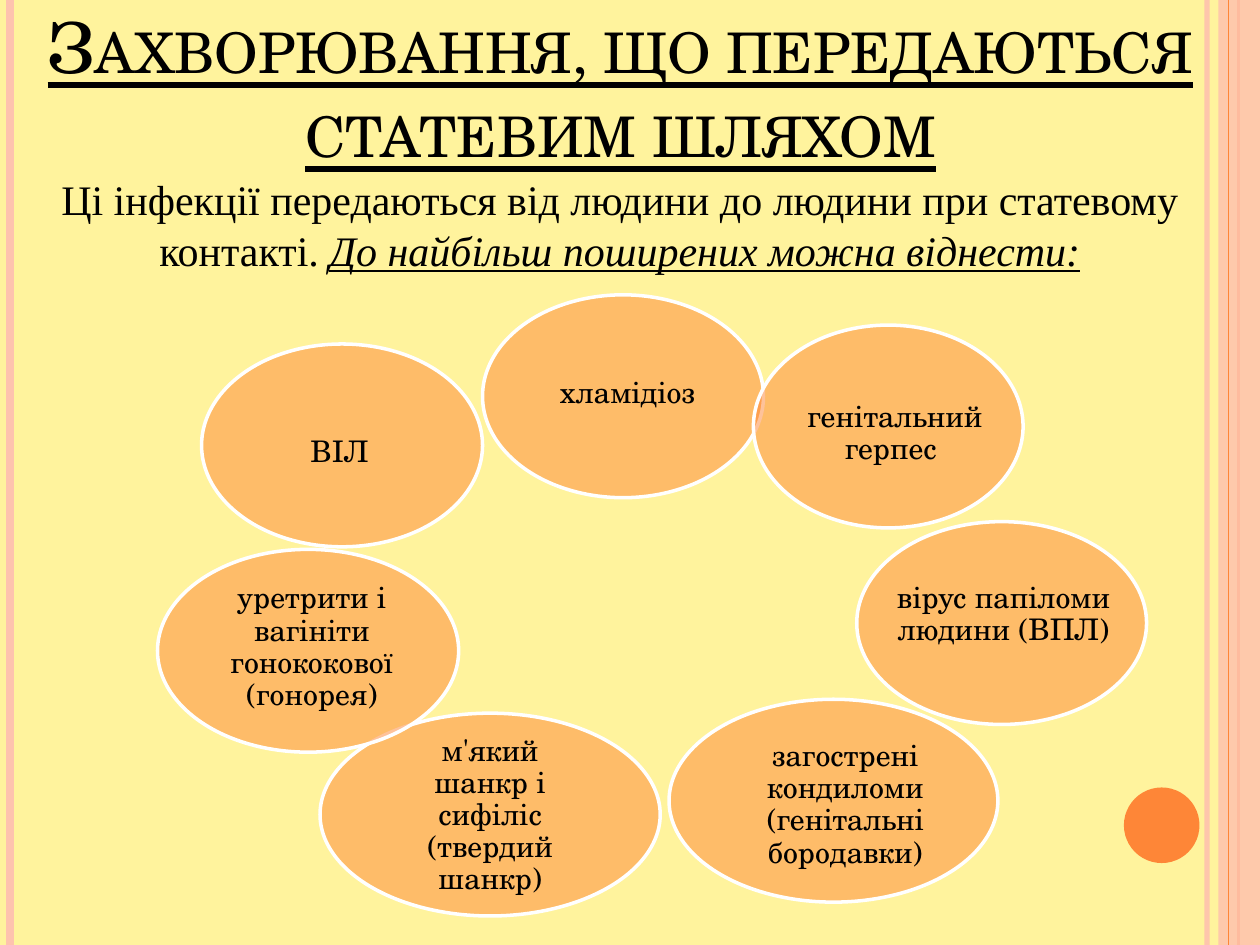
import pptx
import pptx.util
import pptx.dml.color
import pptx.enum.shapes
import pptx.enum.text
import pptx.oxml
from pptx.oxml.ns import nsdecls, qn

Inches, Pt = pptx.util.Inches, pptx.util.Pt
SHAPES = pptx.enum.shapes.MSO_SHAPE
ANCHORS = pptx.enum.text.MSO_ANCHOR

ORANGE, PEACH, CREAM, WHITE, BLACK = "FE8637", "FEC3AE", "FFF39D", "FFFFFF", "000000"
SERIF, SCHOOL = "Times New Roman", "TeX Gyre Schola"
PAGE_WIDTH, PAGE_HEIGHT = 10, 7.5
OVAL_HEIGHT = 1.61

# Wording, oval (left, top, width), label (left, top, width, height) within the oval
DISEASES = [
    ("хламідіоз", (3.83, 2.34, 2.23), (0.23, 0.24, 1.84, 1.09)),
    (" генітальний герпес", (5.98, 2.58, 2.14), (0.19, 0.23, 1.8, 1.27)),
    ("вірус папіломи людини (ВПЛ)", (6.8, 4.14, 2.3), (0.31, 0.16, 1.71, 1.16)),
    ("загострені кондиломи (генітальні бородавки)", (5.31, 5.55, 2.61), (0.32, 0.23, 2.16, 1.22)),
    ("м'який шанкр і сифіліс (твердий шанкр)", (2.54, 5.66, 2.7), (0.74, 0.04, 1.22, 1.55)),
    ("уретрити і вагініти гонококової (гонорея)", (1.25, 4.36, 2.39), (0.37, 0.2, 1.71, 1.16)),
    ("ВІЛ", (1.6, 2.73, 2.23), (0.59, 0.32, 1.01, 1.09)),
]


def color(value):
    return pptx.dml.color.RGBColor.from_string(value)


def set_alpha(fill_owner, percent):
    """Make the solid colour inside the given XML element partly transparent."""
    srgb = next(fill_owner.iter(qn("a:srgbClr")))
    srgb.append(pptx.oxml.parse_xml(f'<a:alpha {nsdecls("a")} val="{percent * 1000}"/>'))


def add_filled(page, kind, box, fill, alpha=100, outline=None):
    shape = page.shapes.add_shape(kind, *map(Inches, box))
    shape.shadow.inherit = False
    shape.fill.solid()
    shape.fill.fore_color.rgb = color(fill)
    if alpha < 100:
        set_alpha(shape._element.spPr, alpha)
    if outline:
        shape.line.color.rgb = color(outline)
        shape.line.width = Pt(2)
    else:
        shape.line.fill.background()
    return shape


def add_stripe(page, left, line_color, width, alpha=100):
    stripe = page.shapes.add_connector(
        pptx.enum.shapes.MSO_CONNECTOR.STRAIGHT,
        Inches(left), 0, Inches(left), Inches(PAGE_HEIGHT))
    stripe.line.color.rgb = color(line_color)
    stripe.line.width = Pt(width)
    properties = stripe._element.spPr
    if alpha < 100:
        set_alpha(properties, alpha)
    properties.append(pptx.oxml.parse_xml(f'<a:effectLst {nsdecls("a")}/>'))


def add_text(page, box, anchor=ANCHORS.TOP, margin=None):
    """Add a wrapping text box and return its centred paragraph."""
    frame = page.shapes.add_textbox(*map(Inches, box)).text_frame
    frame.word_wrap = True
    frame.vertical_anchor = anchor
    if margin is not None:
        frame.margin_left = frame.margin_right = Inches(margin)
        frame.margin_top = frame.margin_bottom = Inches(margin)
    para = frame.paragraphs[0]
    para.alignment = pptx.enum.text.PP_ALIGN.CENTER
    return para


def add_span(para, text, font, size, italic=False, underline=False):
    span = para.add_run()
    span.text = text
    span.font.name = font
    span.font.size = Pt(size)
    span.font.italic = italic
    span.font.underline = underline
    span.font.color.rgb = color(BLACK)
    return span


def add_decoration(page):
    add_stripe(page, 9.58, PEACH, 3, alpha=93)
    add_stripe(page, 0.08, PEACH, 4.5)
    add_stripe(page, 9.83, ORANGE, 1.5)
    add_filled(page, SHAPES.RECTANGLE, (9.67, 0, 0.33, PAGE_HEIGHT), PEACH, alpha=87)
    add_stripe(page, 9.75, ORANGE, 0.75)
    add_filled(page, SHAPES.OVAL, (8.92, 6.25, 0.6, 0.6), ORANGE)


def add_title(page, box):
    para = add_text(page, box, ANCHORS.BOTTOM)
    span = add_span(para, "Захворювання, що передаються статевим шляхом", SCHOOL, 40,
                    underline=True)
    span.font._element.set("cap", "small")


def add_introduction(page, box):
    para = add_text(page, box)
    add_span(para, "Ці інфекції передаються від людини до людини при статевому контакті. ",
             SERIF, 24)
    add_span(para, "До найбільш поширених можна віднести:", SERIF, 24,
             italic=True, underline=True)


def add_disease(page, text, oval, label):
    left, top, width = oval
    add_filled(page, SHAPES.OVAL, (left, top, width, OVAL_HEIGHT), ORANGE, 50, WHITE)
    label_left, label_top, *label_size = label
    para = add_text(page, (left + label_left, top + label_top, *label_size),
                    ANCHORS.MIDDLE, margin=0)
    para.line_spacing = 0.9
    add_span(para, text, SCHOOL, 17)


def main():
    deck = pptx.Presentation()
    deck.slide_width, deck.slide_height = Inches(PAGE_WIDTH), Inches(PAGE_HEIGHT)
    page = deck.slides.add_slide(deck.slide_layouts[6])
    page.background.fill.solid()
    page.background.fill.fore_color.rgb = color(CREAM)
    add_decoration(page)
    add_title(page, (0.16, 0, 9.53, 1.41))
    add_introduction(page, (0, 1.33, 9.84, 0.91))
    for disease in DISEASES:
        add_disease(page, *disease)
    deck.save("out.pptx")


if __name__ == "__main__":
    main()
